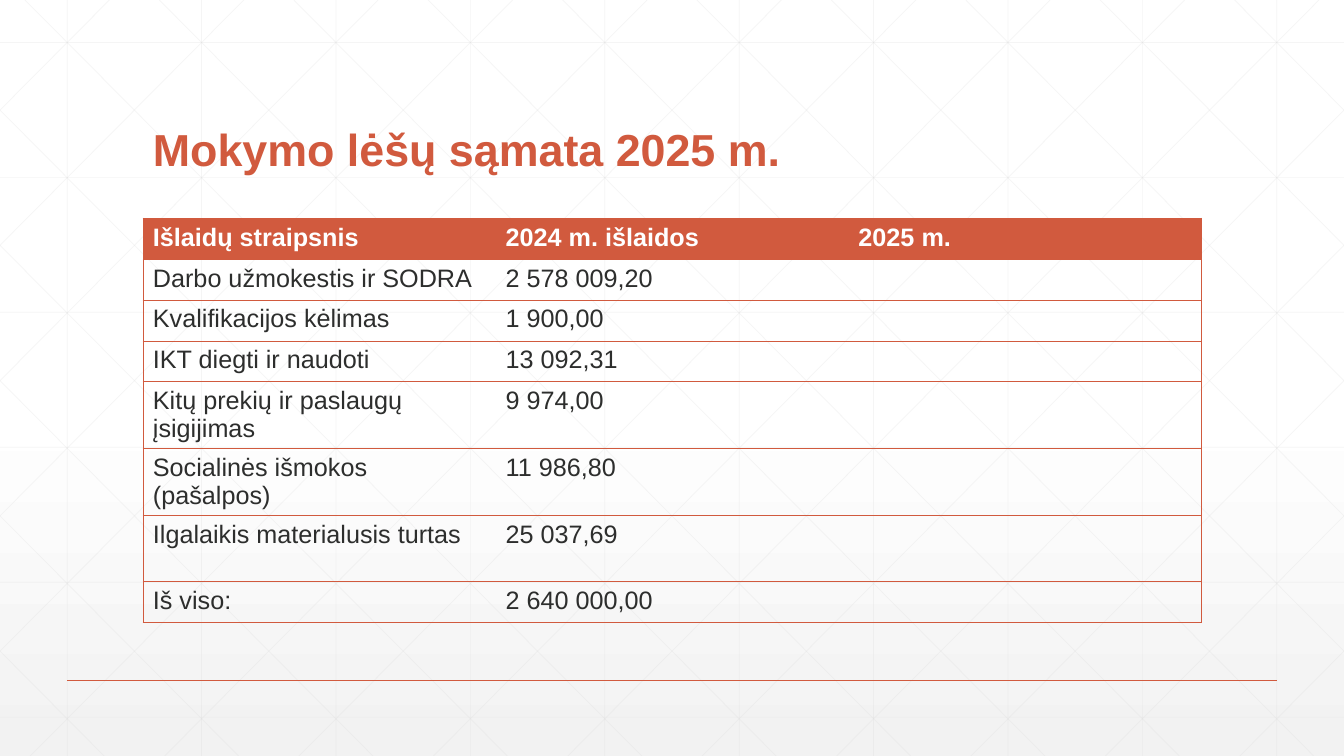
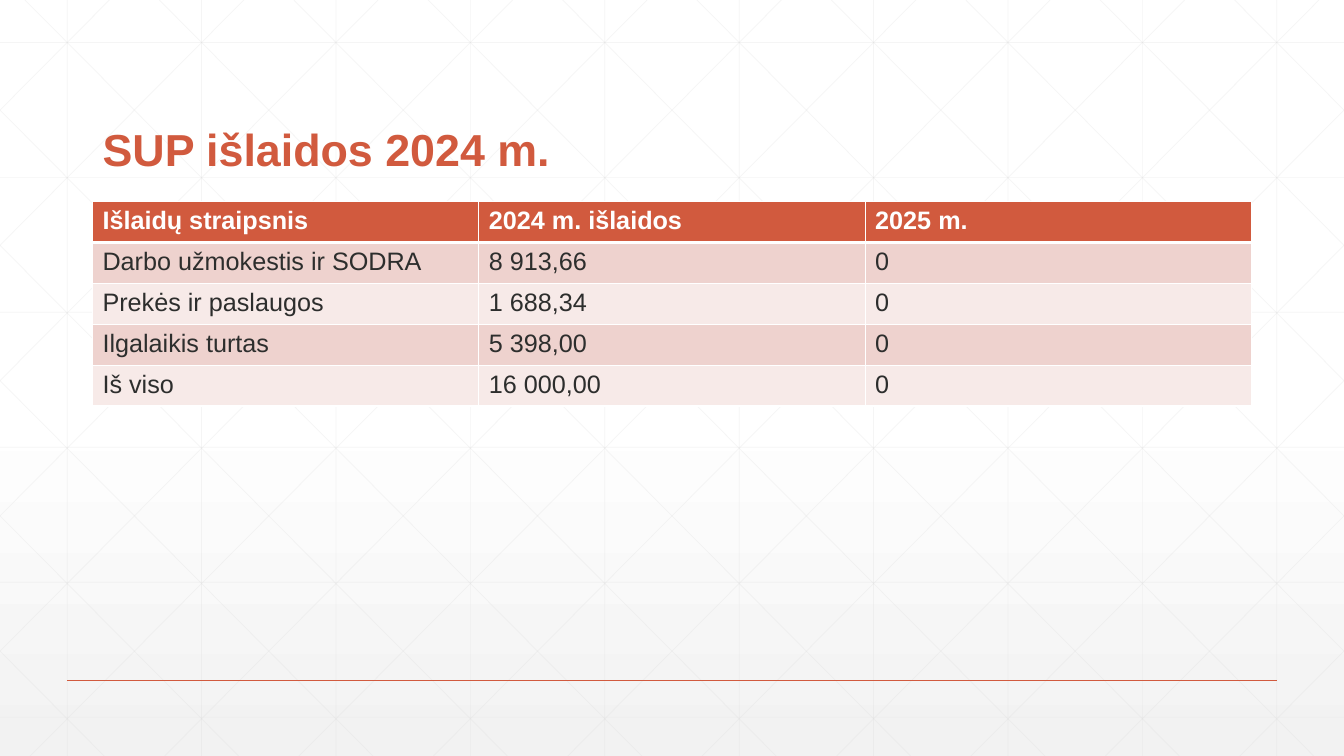
from dataclasses import dataclass

from pptx import Presentation, util as u
from pptx.dml.color import RGBColor
from pptx.enum import shapes, text
from pptx.oxml import parse_xml
from pptx.oxml.ns import nsdecls, qn
from pptx.oxml.xmlchemy import OxmlElement

Cm, Pt = u.Cm, u.Pt
WIDE, HIGH = 33.87, 19.05
PLAIN = "{2D5ABB26-0587-4C30-8999-92F81FD0307C}"


@dataclass(frozen=True)
class Theme:
    font: str = "Arial"
    main: str = "D15A3E"
    ink: str = "2D2E2D"
    white: str = "FFFFFF"
    shade: str = "F2F2F2"
    mesh: str = "D9D9D9"
    bands: tuple = ("EED2CE", "F7EAE8")
    head: int = 32
    body: int = 18


class Deck:
    def __init__(self, theme):
        self.theme = theme
        self.prs = Presentation()
        self.prs.slide_width, self.prs.slide_height = Cm(WIDE), Cm(HIGH)
        self.layout = self.prs.slide_layouts.get_by_name("Title Only")
        self.slide = None
        for item in list(self.layout.placeholders):
            if item.placeholder_format.idx:
                item.element.getparent().remove(item.element)
        self.paint()

    def paint(self):
        """Give the layout its gradient background."""
        t = self.theme
        stops = "".join(
            f'<a:gs pos="{pos * 1000}"><a:srgbClr val="{color}"/></a:gs>'
            for pos, color in ((0, t.white), (53, t.white), (100, t.shade)))
        self.layout.element.cSld.insert(0, parse_xml(
            f'<p:bg {nsdecls("p", "a")}><p:bgPr><a:gradFill rotWithShape="1">'
            f'<a:gsLst>{stops}</a:gsLst><a:lin ang="5400000" scaled="0"/>'
            '</a:gradFill><a:effectLst/></p:bgPr></p:bg>'))

    def line(self, x1, y1, x2, y2, color, width, alpha=None):
        link = self.slide.shapes.add_connector(
            shapes.MSO_CONNECTOR.STRAIGHT, Cm(x1), Cm(y1), Cm(x2), Cm(y2))
        link.line.color.rgb = RGBColor.from_string(color)
        link.line.width = Pt(width)
        props = link.element.spPr
        if alpha:
            clear = OxmlElement("a:alpha")
            clear.set("val", str(alpha * 1000))
            next(props.iter(qn("a:srgbClr"))).append(clear)
        props.append(OxmlElement("a:effectLst"))
        return link

    def mesh(self):
        """Yield the end points of the background lattice."""
        step, edge, run = WIDE / 10, 0.63, 18.93
        for k in range(10):
            x = (k + 0.5) * step
            yield x, 0, x, HIGH
        for k in range(6):
            y = 1.07 + 3.4 * k
            yield 0, y, WIDE, y
        for k in range(-5, 10):
            top = edge + k * step
            x1, x2 = max(top, 0), min(top + run, WIDE)
            y1, y2 = ((x - top) * HIGH / run for x in (x1, x2))
            yield x1, y1, x2, y2
            yield WIDE - x1, y1, WIDE - x2, y2

    def decor(self):
        """Draw the lattice and foot rule, then hand them to the layout."""
        t = self.theme
        links = [self.line(*ends, t.mesh, 0.5, 25) for ends in self.mesh()]
        links.append(self.line(1.69, 17.15, 32.17, 17.15, t.main, 1))
        for link in links:
            self.layout.shapes.element.append(link.element)

    def style(self, para, size, color, bold):
        for run in para.runs:
            font = run.font
            font.name, font.size, font.bold = self.theme.font, Pt(size), bold
            font.color.rgb = RGBColor.from_string(color)

    def open(self, title, left, width):
        """Start a slide with its title."""
        first = self.slide is None
        self.slide = self.prs.slides.add_slide(self.layout)
        if first:
            self.decor()
        box = self.slide.shapes.title
        box.left, box.top = Cm(left), Cm(1.4)
        box.width, box.height = Cm(width), Cm(3.18)
        frame = box.text_frame
        frame.text = title
        frame.word_wrap = True
        frame.auto_size = text.MSO_AUTO_SIZE.NONE
        frame.vertical_anchor = text.MSO_ANCHOR.BOTTOM
        para = frame.paragraphs[0]
        para.alignment = text.PP_ALIGN.LEFT
        para.line_spacing = 0.9
        self.style(para, self.theme.head, self.theme.main, True)

    def border(self, cell, sides):
        """Set borders from a map of side letter to (colour, points)."""
        props = cell._tc.get_or_add_tcPr()
        for side in "LRTB":
            if side in sides:
                color, width = sides[side]
                props.append(parse_xml(
                    f'<a:ln{side} {nsdecls("a")} w="{Pt(width)}"><a:solidFill>'
                    f'<a:srgbClr val="{color}"/></a:solidFill></a:ln{side}>'))

    def table(self, rows, left, top, width, highs, sides, bands=()):
        """Add a table; sides(row, col) gives the borders of a cell."""
        t = self.theme
        count = len(rows[0])
        frame = self.slide.shapes.add_table(
            len(rows), count, Cm(left), Cm(top), Cm(width), Cm(sum(highs)))
        next(frame.element.iter(qn("a:tableStyleId"))).text = PLAIN
        grid = frame.table
        grid.horz_banding = False
        for col in grid.columns:
            col.width = Cm(width / count)
        for r, (row, high) in enumerate(zip(rows, highs)):
            grid.rows[r].height = Cm(high)
            for c, word in enumerate(row):
                cell = grid.cell(r, c)
                cell.text_frame.text = word
                self.style(cell.text_frame.paragraphs[0], t.body,
                           ink := t.ink if r else t.white, ink == t.white)
                self.border(cell, sides(r, c))
                fill = bands[(r - 1) % len(bands)] if r and bands else t.main
                if r and not bands:
                    cell.fill.background()
                else:
                    cell.fill.solid()
                    cell.fill.fore_color.rgb = RGBColor.from_string(fill)


HEAD = ("Išlaidų straipsnis", "2024 m. išlaidos", "2025 m.")
BUDGET = (
    HEAD,
    ("Darbo užmokestis ir SODRA", "2 578 009,20", ""),
    ("Kvalifikacijos kėlimas", "1 900,00", ""),
    ("IKT diegti ir naudoti", "13 092,31", ""),
    ("Kitų prekių ir paslaugų įsigijimas", "9 974,00", ""),
    ("Socialinės išmokos (pašalpos)", "11 986,80", ""),
    ("Ilgalaikis materialusis turtas", "25 037,69", ""),
    ("Iš viso:", "2 640 000,00", ""),
)
COSTS = (
    HEAD,
    ("Darbo užmokestis ir SODRA", "8 913,66", "0"),
    ("Prekės ir paslaugos", "1 688,34", "0"),
    ("Ilgalaikis turtas", "5 398,00", "0"),
    ("Iš viso", "16 000,00", "0"),
)
LOW, TALL = 1.03, 1.68


def main():
    theme = Theme()
    deck = Deck(theme)

    def ruled(row, col):
        """Rules between rows and a frame around the table."""
        keys = "TB" + {0: "L", len(HEAD) - 1: "R"}.get(col, "")
        return dict.fromkeys(keys, (theme.main, 0.5))

    def boxed(row, col):
        """White lines on every side, thicker under the header."""
        sides = dict.fromkeys("LRTB", (theme.white, 1))
        if row < 2:
            sides["T" if row else "B"] = (theme.white, 3)
        return sides

    deck.open("Mokymo lėšų sąmata 2025 m.", 3.6, 26.67)
    highs = [LOW] * 4 + [TALL] * 3 + [LOW]
    deck.table(BUDGET, 3.6, 5.5, 26.67, highs, ruled)

    deck.open("SUP išlaidos 2024 m.", 2.33, 27.94)
    deck.table(COSTS, 2.33, 5.08, 29.21, [LOW] * len(COSTS), boxed,
               theme.bands)

    deck.prs.save("out.pptx")


if __name__ == "__main__":
    main()
